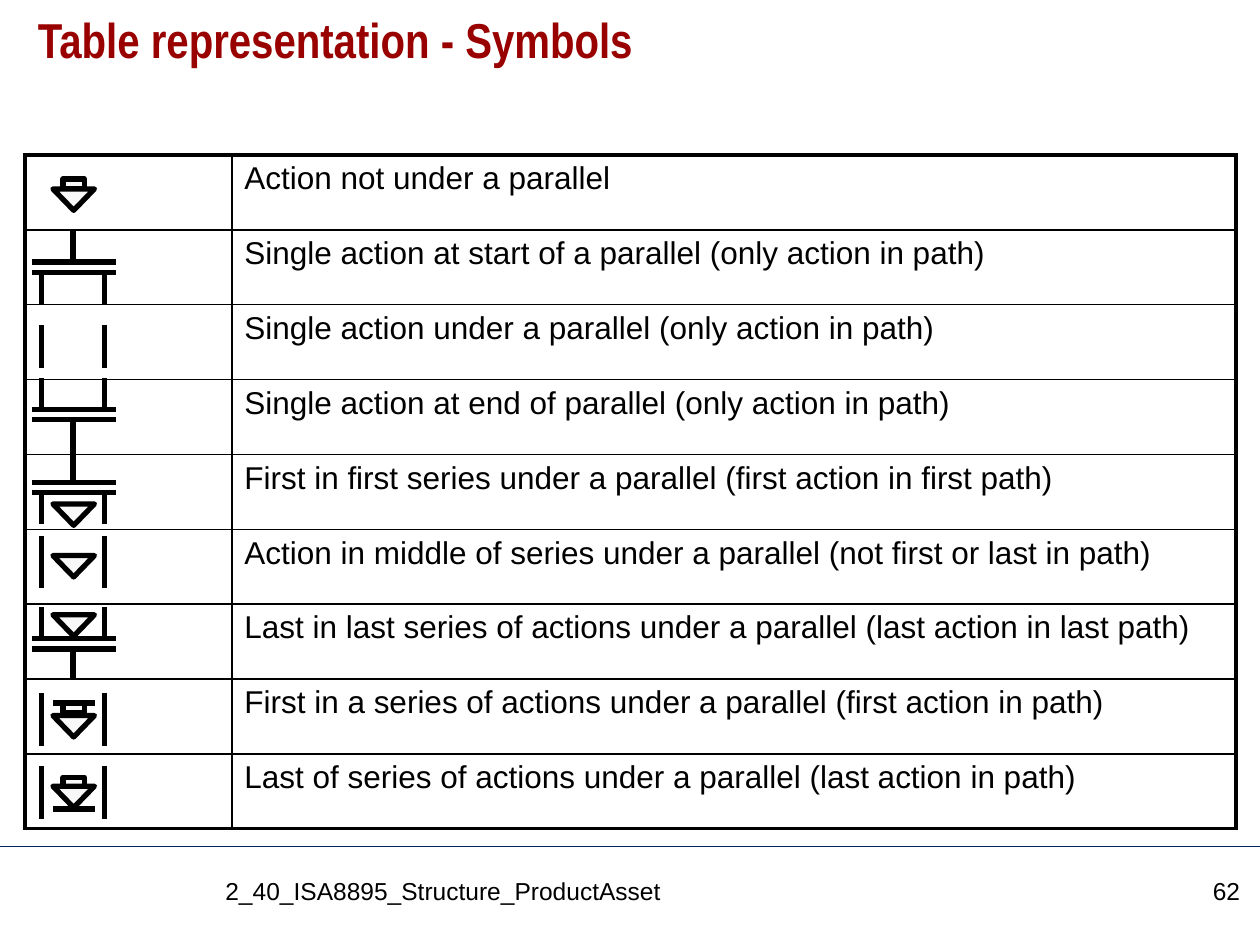
import pptx
import pptx.dml.color
import pptx.enum.shapes
import pptx.enum.text
import pptx.oxml
import pptx.oxml.ns
import pptx.util

Inches = pptx.util.Inches
Pt = pptx.util.Pt
RGBColor = pptx.dml.color.RGBColor
Shape = pptx.enum.shapes.MSO_SHAPE
Align = pptx.enum.text.PP_ALIGN

BLACK = RGBColor(0x00, 0x00, 0x00)
PALE = RGBColor(0xF8, 0xF8, 0xF8)
RED = RGBColor(0x99, 0x00, 0x00)
NAVY = RGBColor(0x00, 0x20, 0x60)

# Grid of the symbols: outer bars, side rails, triangle and stem
BAR = (0.25, 0.92)
RAILS = (0.33, 0.83)
TRI = (0.42, 0.75)
MID = 0.58

ROWS = [
    "Action not under a parallel",
    "Single action at start of a parallel (only action in path)",
    "Single action under a parallel (only action in path)",
    "Single action at end of parallel (only action in path)",
    "First in first series under a parallel (first action in first path)",
    "Action in middle of series under a parallel (not first or last in path)",
    "Last in last series of actions under a parallel (last action in last path)",
    "First in a series of actions under a parallel (first action in path)",
    "Last of series of actions under a parallel (last action in path)",
]


class Deck:
    font = "Arial"
    stroke = 3

    def __init__(self):
        self.prs = pptx.Presentation()
        self.prs.slide_width = Inches(10)
        self.prs.slide_height = Inches(7.5)
        self.slide = self.prs.slides.add_slide(self.prs.slide_layouts[5])
        self.pen = self.slide.shapes

    def group(self):
        """Send the marks that follow to a new group."""
        self.pen = self.slide.shapes.add_group_shape().shapes

    def style(self, para, size, color=BLACK, font=None, bold=False, align=Align.LEFT):
        para.alignment = align
        for run in para.runs:
            run.font.name = font or self.font
            run.font.size = Pt(size)
            run.font.bold = bold
            run.font.color.rgb = color

    def title(self, text):
        box = self.slide.shapes.title
        box.left, box.top = Inches(0.2), Inches(0.08)
        box.width, box.height = Inches(9.61), Inches(0.83)
        frame = box.text_frame
        frame.text = text
        frame.auto_size = pptx.enum.text.MSO_AUTO_SIZE.NONE
        frame.vertical_anchor = pptx.enum.text.MSO_ANCHOR.TOP
        para = frame.paragraphs[0]
        para.line_spacing = 0.9
        self.style(para, 28, RED, "Arial Narrow", True)

    def text(self, text, x, y, w, h, align=Align.LEFT):
        box = self.slide.shapes.add_textbox(Inches(x), Inches(y), Inches(w), Inches(h))
        frame = box.text_frame
        frame.word_wrap = True
        frame.text = text
        self.style(frame.paragraphs[0], 14, align=align)

    def line(self, x1, y1, x2, y2, color=BLACK, width=None):
        line = self.pen.add_connector(
            pptx.enum.shapes.MSO_CONNECTOR.STRAIGHT,
            Inches(x1), Inches(y1), Inches(x2), Inches(y2))
        line.line.color.rgb = color
        line.line.width = Pt(width or self.stroke)
        props = line.element.spPr
        props.append(props.makeelement(pptx.oxml.ns.qn("a:effectLst"), {}))

    def shape(self, kind, x, y, w, h):
        shape = self.pen.add_shape(kind, Inches(x), Inches(y), Inches(w), Inches(h))
        shape.shadow.inherit = False
        shape.fill.solid()
        shape.fill.fore_color.rgb = PALE
        shape.line.color.rgb = BLACK
        shape.line.width = Pt(self.stroke)
        return shape

    def tri(self, y):
        tri = self.shape(Shape.ISOSCELES_TRIANGLE, TRI[0], y, TRI[1] - TRI[0], 0.17)
        tri.element.spPr.get_or_add_xfrm().set("flipV", "1")

    def cap(self, y):
        self.shape(Shape.RECTANGLE, 0.5, y, 0.17, 0.08)

    def rails(self, y1, y2):
        for x in RAILS:
            self.line(x, y1, x, y2)

    def fork(self, y, way=1):
        """Stem from y, double bar and two legs; way is 1 down, -1 up."""
        near, far, end = (y + way * step for step in (0.25, 0.33, 0.58))
        for bar in (near, far):
            self.line(BAR[0], bar, BAR[1], bar)
        self.rails(far, end)
        self.line(MID, y, MID, near)

    def edge(self, cell, side, width):
        cell.get_or_add_tcPr().append(pptx.oxml.parse_xml(
            f'<a:ln{side} {pptx.oxml.ns.nsdecls("a")} w="{Pt(width)}">'
            f'<a:solidFill><a:srgbClr val="{BLACK}"/></a:solidFill></a:ln{side}>'))

    def table(self, rows, x, y, cols, h):
        last = len(rows) - 1
        table = self.slide.shapes.add_table(
            len(rows), 2, Inches(x), Inches(y), Inches(sum(cols)), Inches(h)).table
        table.first_row = table.horz_banding = False
        for col, wide in zip(table.columns, cols):
            col.width = Inches(wide)
        for r, text in enumerate(rows):
            table.cell(r, 1).text_frame.text = text
            self.style(table.cell(r, 1).text_frame.paragraphs[0], 18)
            for c in range(2):
                cell = table.cell(r, c)
                outer = {"L": c == 0, "R": c == 1, "T": r == 0, "B": r == last}
                for side, thick in outer.items():
                    self.edge(cell._tc, side, 2.25 if thick else 1)
                cell.fill.background()


def symbols(deck):
    deck.group()
    deck.cap(1.42)
    deck.tri(1.5)

    deck.group()
    deck.fork(1.83)

    deck.group()
    deck.rails(2.58, 2.92)

    deck.group()
    deck.fork(3.58, -1)

    deck.group()
    deck.fork(3.58)
    deck.tri(4)

    deck.group()
    deck.rails(4.25, 4.67)
    deck.tri(4.41)

    deck.group()
    deck.fork(5.4, -1)
    deck.tri(4.88)

    # First and last of a series: a rule above or below the action
    for top, rule, cap, tri in ((5.5, 5.58, 5.58, 5.68), (6.08, 6.42, 6.17, 6.24)):
        deck.group()
        deck.line(TRI[0], rule, TRI[1], rule)
        deck.cap(cap)
        deck.rails(top, top + 0.42)
        deck.tri(tri)


def main():
    deck = Deck()
    deck.line(0, 6.72, 10, 6.72, NAVY, 0.75)
    deck.title("Table representation - Symbols")
    deck.table(ROWS, 0.2, 1.23, (1.64, 7.97), 5.35)
    deck.text("2_40_ISA8895_Structure_ProductAsset", 1.69, 6.9, 7.21, 0.45)
    deck.text("62", 9.02, 6.9, 0.92, 0.45, Align.RIGHT)
    symbols(deck)
    deck.prs.save("out.pptx")


if __name__ == "__main__":
    main()
